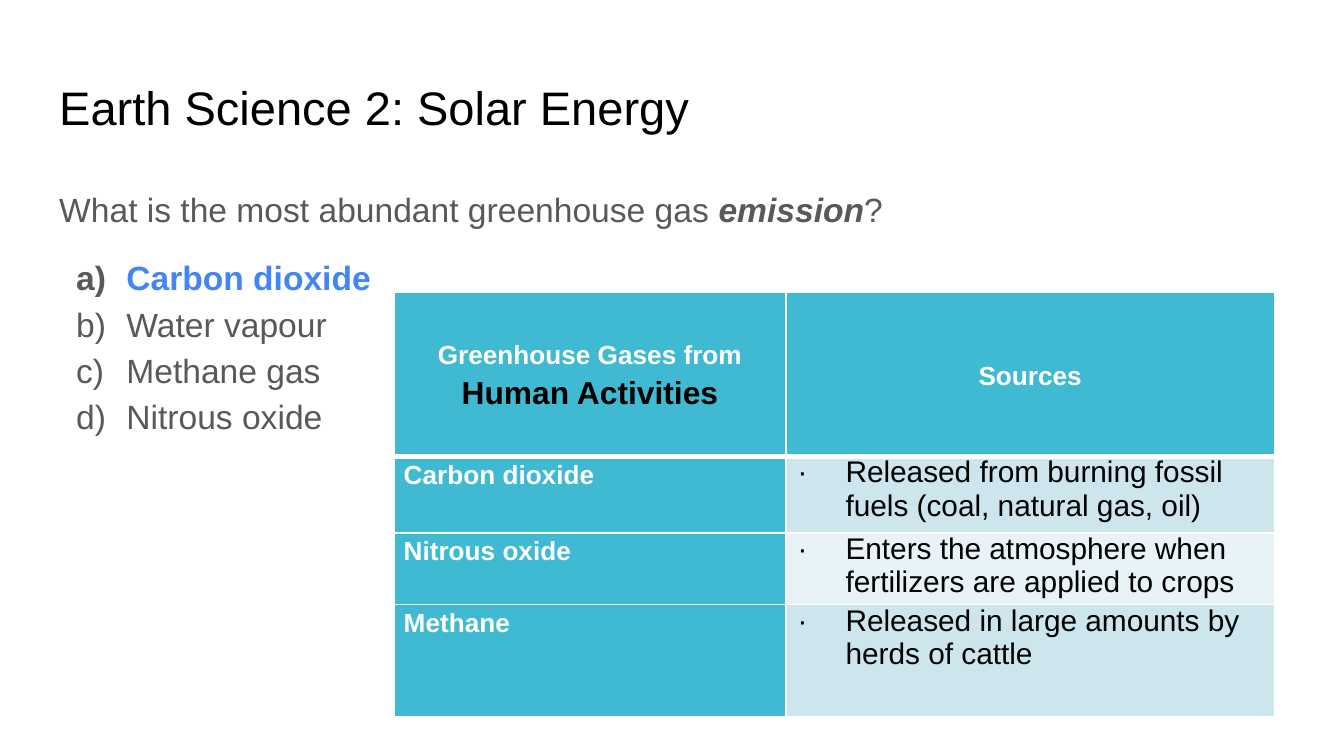
from dataclasses import dataclass

import pptx
import pptx.util
from lxml import etree
from pptx.dml.color import RGBColor
from pptx.enum.text import MSO_ANCHOR, PP_ALIGN
from pptx.oxml.ns import qn
from pptx.util import Cm, Pt

BLACK = RGBColor(0x00, 0x00, 0x00)
WHITE = RGBColor(0xFF, 0xFF, 0xFF)
GREY = RGBColor(0x59, 0x59, 0x59)
BLUE = RGBColor(0x42, 0x85, 0xF4)
TEAL = RGBColor(0x40, 0xBA, 0xD2)
PALE = RGBColor(0xCD, 0xE6, 0xEE)
PALER = RGBColor(0xE8, 0xF3, 0xF7)


@dataclass
class GasRow:
    gas: str
    source: str
    height: float
    fill: RGBColor


ANSWERS = ["Carbon dioxide", "Water vapour", "Methane gas", "Nitrous oxide"]
CORRECT = "Carbon dioxide"
GAS_ROWS = [
    GasRow("Carbon dioxide", "Released from burning fossil fuels (coal, natural gas, oil)", 1.45, PALE),
    GasRow("Nitrous oxide", "Enters the atmosphere when fertilizers are applied to crops", 1.27, PALER),
    GasRow("Methane", "Released in large amounts by herds of cattle", 2.13, PALE),
]
HEADER_HEIGHT = 3.1
COLUMN_WIDTHS = [7.4, 9.24]


def add_run(p, text: str, *, size: float, color: RGBColor,
            bold: bool = False, italic: bool = False) -> None:
    r = p.add_run()
    r.text = text
    r.font.name = "Arial"
    r.font.size = Pt(size)
    r.font.color.rgb = color
    r.font.bold = bold
    r.font.italic = italic


def add_text_box(s, left: float, top: float, width: float, height: float):
    tf = s.shapes.add_textbox(Cm(left), Cm(top), Cm(width), Cm(height)).text_frame
    tf.word_wrap = True
    tf.margin_left = tf.margin_right = tf.margin_top = tf.margin_bottom = Cm(0.25)
    return tf


def set_bullet(p, tag: str, color: RGBColor, left: float, hang: float, **attrs: str) -> None:
    """Give the paragraph a hanging indent and a coloured bullet or number."""
    pPr = p._p.get_or_add_pPr()
    pPr.set("marL", str(Cm(left)))
    pPr.set("indent", str(-Cm(hang)))
    clr = etree.SubElement(pPr, qn("a:buClr"))
    etree.SubElement(clr, qn("a:srgbClr"), val=str(color))
    etree.SubElement(pPr, qn("a:buFont"), typeface="Arial")
    etree.SubElement(pPr, qn(tag), **attrs)


def set_borders(cell, **widths: float) -> None:
    """Draw white cell borders; call before the fill, which must follow them."""
    tcPr = cell._tc.get_or_add_tcPr()
    for side in ("L", "R", "T", "B"):
        ln = etree.SubElement(tcPr, qn(f"a:ln{side}"), w=str(Pt(widths.get(side, 1))))
        fill = etree.SubElement(ln, qn("a:solidFill"))
        etree.SubElement(fill, qn("a:srgbClr"), val=str(WHITE))


def format_cell(cell, fill: RGBColor, **borders: float):
    """Style a cell and return its first paragraph."""
    set_borders(cell, **borders)
    cell.fill.solid()
    cell.fill.fore_color.rgb = fill
    cell.margin_left = cell.margin_right = Cm(0.18)
    cell.margin_top = cell.margin_bottom = 0
    return cell.text_frame.paragraphs[0]


def add_question(s) -> None:
    tf = add_text_box(s, 0.87, 3.2, 23.67, 9.5)
    p = tf.paragraphs[0]
    p.line_spacing = 1.15
    add_run(p, "What is the most abundant greenhouse gas ", size=18, color=GREY)
    add_run(p, "emission", size=18, color=GREY, bold=True, italic=True)
    add_run(p, "?", size=18, color=GREY)
    for i, answer in enumerate(ANSWERS):
        p = tf.add_paragraph()
        p.line_spacing = 1.15
        p.space_before = Pt(0 if i else 12)
        set_bullet(p, "a:buAutoNum", GREY, 1.27, 0.95, type="alphaLcParenR")
        correct = answer == CORRECT
        add_run(p, answer, size=18, color=BLUE if correct else GREY, bold=correct)


def add_gas_table(s) -> None:
    heights = [HEADER_HEIGHT] + [row.height for row in GAS_ROWS]
    table = s.shapes.add_table(len(heights), 2, Cm(7.45), Cm(5.52),
                               Cm(sum(COLUMN_WIDTHS)), Cm(sum(heights))).table
    for column, width in zip(table.columns, COLUMN_WIDTHS):
        column.width = Cm(width)
    for row, height in zip(table.rows, heights):
        row.height = Cm(height)

    headers = [format_cell(cell, TEAL, B=3) for cell in table.rows[0].cells]
    for p, cell in zip(headers, table.rows[0].cells):
        cell.vertical_anchor = MSO_ANCHOR.MIDDLE
        p.alignment = PP_ALIGN.CENTER
        p.line_spacing = 1.15
    add_run(headers[0], "Greenhouse Gases from ", size=14, color=WHITE, bold=True)
    add_run(headers[0], "Human Activities", size=17, color=BLACK, bold=True)
    add_run(headers[1], "Sources", size=14, color=WHITE, bold=True)

    for i, row in enumerate(GAS_ROWS, start=1):
        top = 3 if i == 1 else 1
        p = format_cell(table.cell(i, 0), TEAL, T=top)
        p.line_spacing = 1.15
        add_run(p, row.gas, size=14, color=WHITE, bold=True)
        p = format_cell(table.cell(i, 1), row.fill, T=top)
        set_bullet(p, "a:buChar", BLACK, 0.95, 0.89, char="∙")
        add_run(p, row.source, size=16, color=BLACK)


def main() -> None:
    prs = pptx.Presentation()
    prs.slide_width, prs.slide_height = Cm(25.4), Cm(14.29)
    s = prs.slides.add_slide(prs.slide_layouts[6])
    title = add_text_box(s, 0.87, 1.24, 23.67, 1.6)
    add_run(title.paragraphs[0], "Earth Science 2: Solar Energy", size=25.2, color=BLACK)
    add_question(s)
    add_gas_table(s)
    prs.save("out.pptx")


if __name__ == "__main__":
    main()
